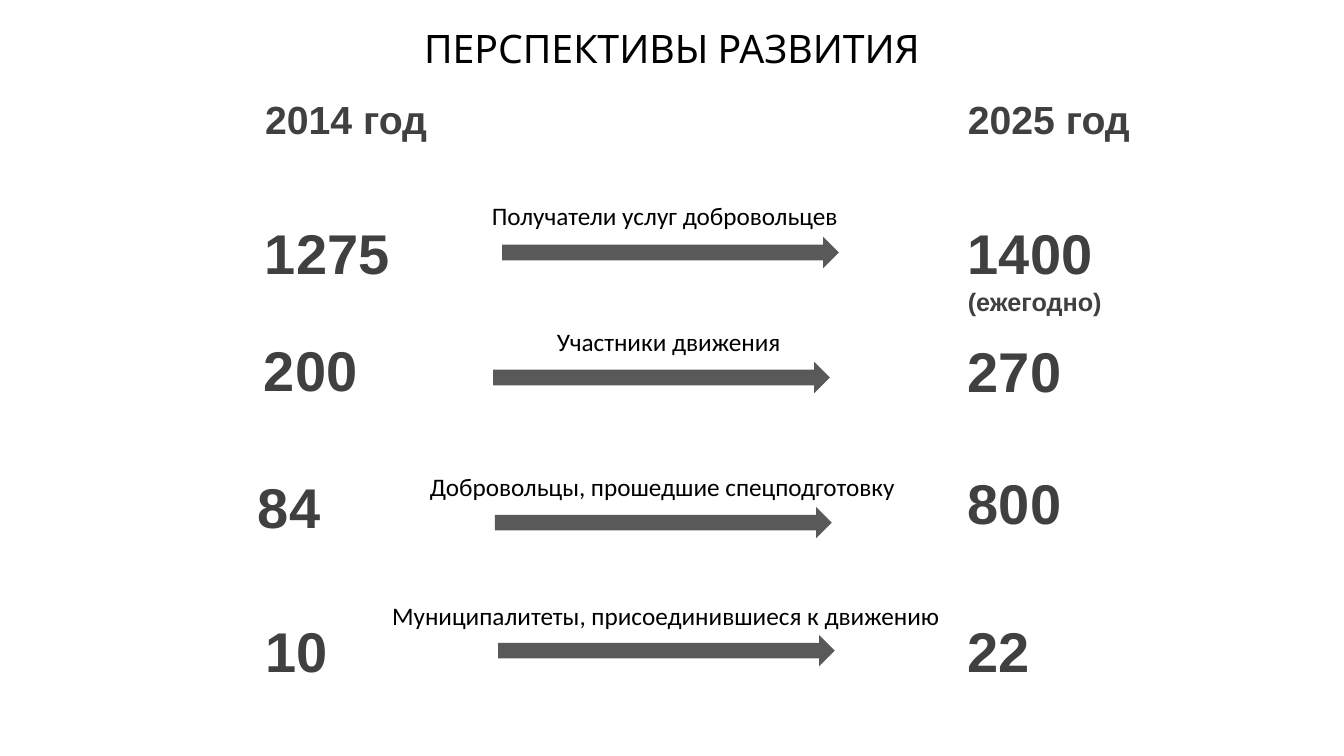
from dataclasses import dataclass

from pptx import Presentation
from pptx.dml.color import RGBColor
from pptx.enum.shapes import MSO_SHAPE
from pptx.enum.text import MSO_ANCHOR, MSO_AUTO_SIZE, PP_ALIGN
from pptx.util import Inches, Pt

BLACK = RGBColor(0x00, 0x00, 0x00)
DARK_GRAY = RGBColor(0x40, 0x40, 0x40)
ARROW_GRAY = RGBColor(0x59, 0x59, 0x59)

TITLE_FORMAT = {"name": "Karla", "size": Pt(28)}
LABEL_FORMAT = {"name": "Calibri", "size": Pt(18)}
YEAR_FORMAT = {"name": "Arial", "size": Pt(28), "bold": True}
NUMBER_FORMAT = YEAR_FORMAT | {"size": Pt(40)}
NOTE_FORMAT = YEAR_FORMAT | {"size": Pt(18)}

SLIDE_WIDTH = 13.33
TARGET_LEFT = 9.5
YEAR_TOP, YEAR_WIDTH, YEAR_HEIGHT = 0.9, 1.92, 0.57
NUMBER_HEIGHT = 0.77
LABEL_HEIGHT = 0.4
ARROW_WIDTH, ARROW_HEIGHT = 3.34, 0.31


@dataclass(frozen=True)
class Box:
    left: float
    top: float
    width: float
    height: float

    def lengths(self) -> list[Inches]:
        return [Inches(value) for value in (self.left, self.top, self.width, self.height)]


@dataclass(frozen=True)
class Number:
    text: str
    left: float
    top: float
    width: float
    height: float = NUMBER_HEIGHT
    note: str = ""


@dataclass(frozen=True)
class Indicator:
    label: str
    label_top: float
    label_width: float
    arrow_left: float
    arrow_top: float
    start: Number
    target: Number


INDICATORS = [
    Indicator("Получатели услуг добровольцев", 1.94, 3.77, 4.98, 2.35,
              Number("1275", 2.53, 2.12, 1.44),
              Number("1400 ", TARGET_LEFT, 2.12, 1.59, 1.08, "(ежегодно)")),
    Indicator("Участники движения", 3.19, 2.48, 4.89, 3.59,
              Number("200", 2.52, 3.28, 1.17),
              Number("270", TARGET_LEFT, 3.29, 1.18)),
    Indicator("Добровольцы, прошедшие спецподготовку", 4.63, 5, 4.91, 5.03,
              Number("84", 2.46, 4.64, 1.01),
              Number("800", TARGET_LEFT, 4.6, 1.19)),
    Indicator("Муниципалитеты, присоединившиеся к движению", 5.91, 5.75, 4.94, 6.3,
              Number("10", 2.53, 6.07, 0.85),
              Number("22", TARGET_LEFT, 6.07, 0.98)),
]


def add_run(paragraph, text: str, text_format: dict, color: RGBColor) -> None:
    run = paragraph.add_run()
    run.text = text
    for name, value in text_format.items():
        setattr(run.font, name, value)
    run.font.color.rgb = color


def add_text(slide, box: Box, text: str, text_format: dict, color: RGBColor,
             wrap: bool = True):
    """Add a one-paragraph text box that grows with its text; return its frame."""
    frame = slide.shapes.add_textbox(*box.lengths()).text_frame
    frame.word_wrap = wrap
    frame.auto_size = MSO_AUTO_SIZE.SHAPE_TO_FIT_TEXT
    add_run(frame.paragraphs[0], text, text_format, color)
    return frame


def add_title(slide) -> None:
    frame = add_text(slide, Box(2.26, 0.14, 8.81, 0.72), "ПЕРСПЕКТИВЫ РАЗВИТИЯ",
                     TITLE_FORMAT, BLACK)
    frame.auto_size = MSO_AUTO_SIZE.NONE
    frame.vertical_anchor = MSO_ANCHOR.MIDDLE
    frame.paragraphs[0].alignment = PP_ALIGN.CENTER
    frame.paragraphs[0].line_spacing = 0.9


def add_number(slide, number: Number) -> None:
    box = Box(number.left, number.top, number.width, number.height)
    frame = add_text(slide, box, number.text, NUMBER_FORMAT, DARK_GRAY)
    if number.note:
        add_run(frame.paragraphs[0], number.note, NOTE_FORMAT, DARK_GRAY)


def add_arrow(slide, left: float, top: float) -> None:
    box = Box(left, top, ARROW_WIDTH, ARROW_HEIGHT)
    arrow = slide.shapes.add_shape(MSO_SHAPE.RIGHT_ARROW, *box.lengths())
    arrow.shadow.inherit = False
    arrow.fill.solid()
    arrow.fill.fore_color.rgb = ARROW_GRAY
    arrow.line.fill.background()


def add_indicator(slide, indicator: Indicator) -> None:
    add_number(slide, indicator.start)
    add_number(slide, indicator.target)
    add_arrow(slide, indicator.arrow_left, indicator.arrow_top)
    label_left = (SLIDE_WIDTH - indicator.label_width) / 2
    label_box = Box(label_left, indicator.label_top, indicator.label_width, LABEL_HEIGHT)
    add_text(slide, label_box, indicator.label, LABEL_FORMAT, BLACK, wrap=False)


def main() -> None:
    presentation = Presentation()
    presentation.slide_width = Inches(SLIDE_WIDTH)
    presentation.slide_height = Inches(7.5)
    slide = presentation.slides.add_slide(presentation.slide_layouts[6])

    add_title(slide)
    for year, left in (("2014 год", 2.53), ("2025 год", TARGET_LEFT)):
        add_text(slide, Box(left, YEAR_TOP, YEAR_WIDTH, YEAR_HEIGHT), year,
                 YEAR_FORMAT, DARK_GRAY)
    for indicator in INDICATORS:
        add_indicator(slide, indicator)

    presentation.save("out.pptx")


if __name__ == "__main__":
    main()
